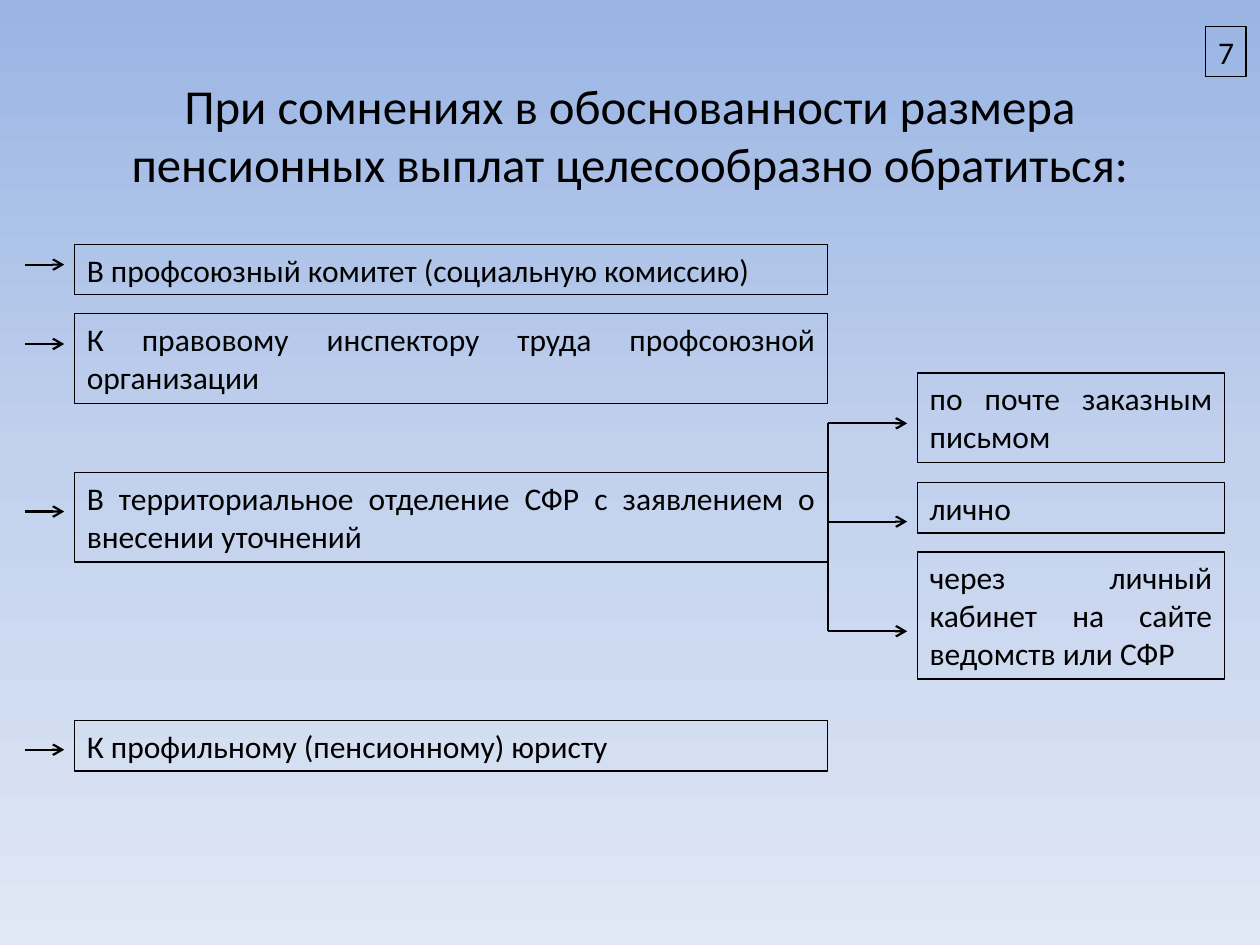
from copy import deepcopy
from dataclasses import dataclass

from lxml import etree
from pptx import Presentation
from pptx.dml.color import RGBColor
from pptx.enum import shapes, text
from pptx.oxml.ns import qn
from pptx.util import Inches, Pt

COLORS = {"ink": "000000", "top": "9AB5E4", "middle": "C2D1ED", "bottom": "E1E8F5"}
FONT = "Calibri"
LINE_HEIGHTS = {1: 0.4, 2: 0.71, 3: 1.01}
ADDRESSEE_LEFT, ADDRESSEE_WIDTH = 0.59, 5.98
METHOD_LEFT, METHOD_WIDTH = 7.28, 2.44
BRANCH_X = ADDRESSEE_LEFT + ADDRESSEE_WIDTH


@dataclass
class Entry:
    """A framed text and the height of the arrow that points to it."""
    label: str
    top: float
    lines: int
    arrow_y: float


ADDRESSEES = [
    Entry("В профсоюзный комитет (социальную комиссию)", 1.94, 1, 2.1),
    Entry("К правовому инспектору труда профсоюзной организации", 2.49, 2, 2.73),
    Entry("В территориальное отделение СФР с заявлением о внесении уточнений", 3.75, 2, 4.06),
    Entry("К профильному (пенсионному) юристу", 5.72, 1, 5.95),
]
METHODS = [
    Entry("по почте заказным письмом", 2.96, 2, 3.36),
    Entry("лично", 3.83, 1, 4.14),
    Entry("через личный кабинет на сайте ведомств или СФР", 4.38, 3, 5.01),
]


def color(name: str) -> RGBColor:
    return RGBColor.from_string(COLORS[name])


def write(frame, label: str, size: float, alignment) -> None:
    frame.text = label
    frame.word_wrap = True
    paragraph = frame.paragraphs[0]
    paragraph.alignment = alignment
    font = paragraph.runs[0].font
    for name, value in {"name": FONT, "size": Pt(size)}.items():
        setattr(font, name, value)
    font.color.rgb = color("ink")


def add_frame(slide, label: str, left: float, top: float, width: float,
              lines: int = 1, alignment=text.PP_ALIGN.JUSTIFY) -> None:
    box = slide.shapes.add_textbox(
        Inches(left), Inches(top), Inches(width), Inches(LINE_HEIGHTS[lines]))
    box.line.color.rgb = color("ink")
    box.line.width = Pt(0.75)
    write(box.text_frame, label, 18, alignment)
    box.text_frame.auto_size = text.MSO_AUTO_SIZE.SHAPE_TO_FIT_TEXT


def add_line(slide, x1: float, y1: float, x2: float, y2: float, arrow: bool = True) -> None:
    line = slide.shapes.add_connector(
        shapes.MSO_CONNECTOR.STRAIGHT, Inches(x1), Inches(y1), Inches(x2), Inches(y2))
    line.line.color.rgb = color("ink")
    line.line.width = Pt(1.25)
    if arrow:
        etree.SubElement(line.line._get_or_add_ln(), qn("a:tailEnd"), type="arrow")
    etree.SubElement(line._element.spPr, qn("a:effectLst"))


def paint_background(slide) -> None:
    fill = slide.background.fill
    fill.gradient()
    fill.gradient_angle = 270
    stop_list = next(slide._element.iter(qn("a:gsLst")))
    stop_list.append(deepcopy(stop_list[0]))
    stops = zip(fill.gradient_stops, ("top", "middle", "bottom"), (0, 0.5, 1))
    for stop, name, position in stops:
        stop.color.rgb = color(name)
        stop.position = position


def add_title(slide) -> None:
    title = slide.shapes.title
    place = {"left": 0.5, "top": 0.44, "width": 9, "height": 1.25}
    for name, value in place.items():
        setattr(title, name, Inches(value))
    write(title.text_frame,
          "При сомнениях в обоснованности размера пенсионных выплат целесообразно обратиться:",
          27.9, text.PP_ALIGN.CENTER)
    title.text_frame.vertical_anchor = text.MSO_ANCHOR.MIDDLE


def main() -> None:
    presentation = Presentation()
    presentation.slide_width, presentation.slide_height = Inches(10), Inches(7.5)
    slide = presentation.slides.add_slide(presentation.slide_layouts[5])
    paint_background(slide)
    add_title(slide)
    for entry in ADDRESSEES:
        add_frame(slide, entry.label, ADDRESSEE_LEFT, entry.top, ADDRESSEE_WIDTH, entry.lines)
        add_line(slide, 0.2, entry.arrow_y, 0.51, entry.arrow_y)
    for entry in METHODS:
        add_frame(slide, entry.label, METHOD_LEFT, entry.top, METHOD_WIDTH, entry.lines)
        add_line(slide, BRANCH_X, entry.arrow_y, 7.2, entry.arrow_y)
    add_line(slide, BRANCH_X, METHODS[0].arrow_y, BRANCH_X, METHODS[-1].arrow_y, arrow=False)
    add_frame(slide, "7", 9.57, 0.21, 0.32, alignment=text.PP_ALIGN.LEFT)
    presentation.save("out.pptx")


if __name__ == "__main__":
    main()
